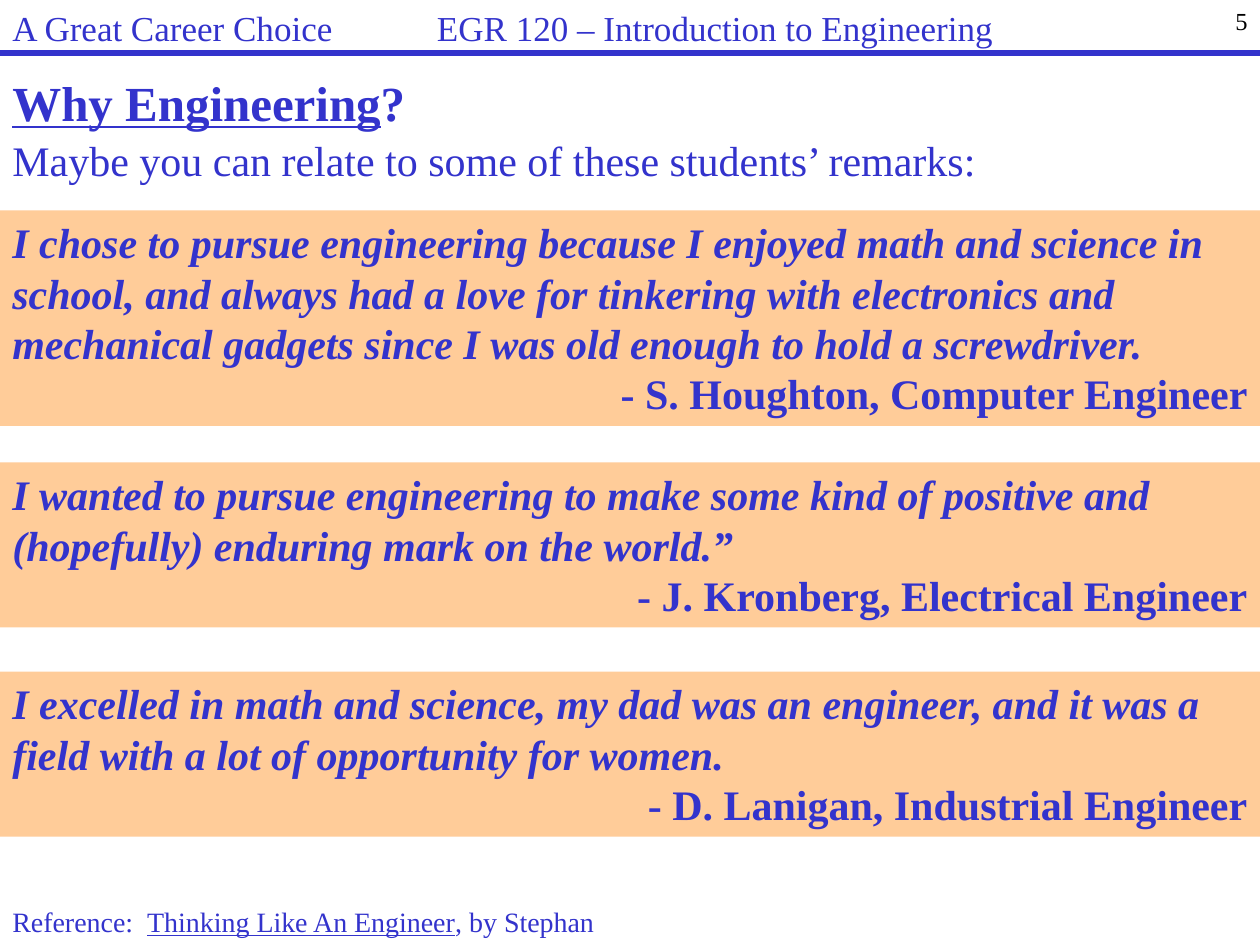
from dataclasses import dataclass

from lxml import etree
from pptx import Presentation
from pptx.dml.color import RGBColor
from pptx.enum.shapes import MSO_CONNECTOR, MSO_SHAPE
from pptx.enum.text import MSO_ANCHOR, PP_ALIGN
from pptx.oxml.ns import qn
from pptx.util import Inches, Pt

LEFT, RIGHT = PP_ALIGN.LEFT, PP_ALIGN.RIGHT
TOP = MSO_ANCHOR.TOP
RECTANGLE = MSO_SHAPE.RECTANGLE
STRAIGHT = MSO_CONNECTOR.STRAIGHT

WIDTH, HEIGHT = 10, 7.5
FONT = "Times New Roman"
COLORS = {"ink": "3333CC", "panel": "FFCC99", "number": "000000"}
BODY_SIZE = 24
HEADER_HEIGHT = 0.42
COURSE_TAB = 3.37
LINE_HEIGHT, PANEL_PADDING = 0.4, 0.11


@dataclass(frozen=True)
class Span:
    text: str
    size: int = BODY_SIZE
    bold: bool = False
    italic: bool = False
    underline: bool = False
    color: str = "ink"


@dataclass(frozen=True)
class Quote:
    top: float
    lines: int
    words: str
    author: str


QUOTES = (
    Quote(1.67, 4, "I chose to pursue engineering because I enjoyed math and science in school, "
          "and always had a love for tinkering with electronics and mechanical gadgets "
          "since I was old enough to hold a screwdriver.",
          "- S. Houghton, Computer Engineer"),
    Quote(3.67, 3, "I wanted to pursue engineering to make some kind of positive and "
          "(hopefully) enduring mark on the world.”",
          "- J. Kronberg, Electrical Engineer"),
    Quote(5.33, 3, "I excelled in math and science, my dad was an engineer, and it was a "
          "field with a lot of opportunity for women.",
          "- D. Lanigan, Industrial Engineer"),
)


def add_paragraph(frame, spans: list[Span], first=False, align=LEFT, spacing=None, before=None):
    paragraph = frame.paragraphs[0] if first else frame.add_paragraph()
    paragraph.alignment = align
    if spacing is not None:
        paragraph.line_spacing = spacing
    if before is not None:
        paragraph.space_before = Pt(before)
    for span in spans:
        run = paragraph.add_run()
        run.text = span.text
        font = run.font
        font.name, font.size = FONT, Pt(span.size)
        font.bold, font.italic, font.underline = span.bold, span.italic, span.underline
        font.color.rgb = RGBColor.from_string(COLORS[span.color])
    return paragraph


def add_text(slide, left: float, top: float, width: float, height: float, wrap=True):
    box = slide.shapes.add_textbox(Inches(left), Inches(top), Inches(width), Inches(height))
    box.text_frame.word_wrap = wrap
    return box.text_frame


def add_quote(slide, quote: Quote) -> None:
    height = quote.lines * LINE_HEIGHT + PANEL_PADDING
    panel = slide.shapes.add_shape(
        RECTANGLE, 0, Inches(quote.top), Inches(WIDTH), Inches(height))
    panel.shadow.inherit = False
    panel.fill.solid()
    panel.fill.fore_color.rgb = RGBColor.from_string(COLORS["panel"])
    panel.line.fill.background()
    frame = panel.text_frame
    frame.word_wrap = True
    frame.vertical_anchor = TOP
    add_paragraph(frame, [Span(quote.words, bold=True, italic=True)], first=True)
    add_paragraph(frame, [Span(quote.author, bold=True)], align=RIGHT)


def add_header(slide) -> None:
    frame = add_text(slide, 0, 0, WIDTH, HEADER_HEIGHT)
    title = "A Great Career Choice\tEGR 120 – Introduction to Engineering"
    paragraph = add_paragraph(frame, [Span(title, 20)], first=True, before=4)
    # Tab stop that places the course name
    properties = paragraph._p.get_or_add_pPr()
    tabs = etree.SubElement(properties, qn("a:tabLst"))
    etree.SubElement(tabs, qn("a:tab"), pos=str(Inches(COURSE_TAB)), algn="l")

    rule = slide.shapes.add_connector(
        STRAIGHT, 0, Inches(HEADER_HEIGHT), Inches(WIDTH), Inches(HEADER_HEIGHT))
    rule.line.color.rgb = RGBColor.from_string(COLORS["ink"])
    rule.line.width = Pt(3)
    etree.SubElement(rule._element.spPr, qn("a:effectLst"))

    number = add_text(slide, 7.92, 0, WIDTH - 7.92, 0.5)
    add_paragraph(number, [Span("5", 14, color="number")], first=True, align=RIGHT)


def main() -> None:
    presentation = Presentation()
    presentation.slide_width, presentation.slide_height = Inches(WIDTH), Inches(HEIGHT)
    slide = presentation.slides.add_slide(presentation.slide_layouts[6])

    add_header(slide)

    # Heading and lead-in
    heading = add_text(slide, 0, 0.58, WIDTH, 0.92)
    add_paragraph(heading, [Span("Why Engineering", 28, bold=True, underline=True),
                            Span("?", 28, bold=True)], first=True, spacing=0.9, before=5.6)
    add_paragraph(heading, [Span("Maybe you can relate to some of these students’ remarks:")],
                  spacing=0.9, before=4.8)

    # Student remarks
    for quote in QUOTES:
        add_quote(slide, quote)

    # Reference
    reference = add_text(slide, 0, 7.13, 4.93, HEIGHT - 7.13, wrap=False)
    add_paragraph(reference, [Span("Reference:  ", 16),
                              Span("Thinking Like An Engineer", 16, underline=True),
                              Span(", by Stephan", 16)], first=True)

    presentation.save("out.pptx")


if __name__ == "__main__":
    main()
